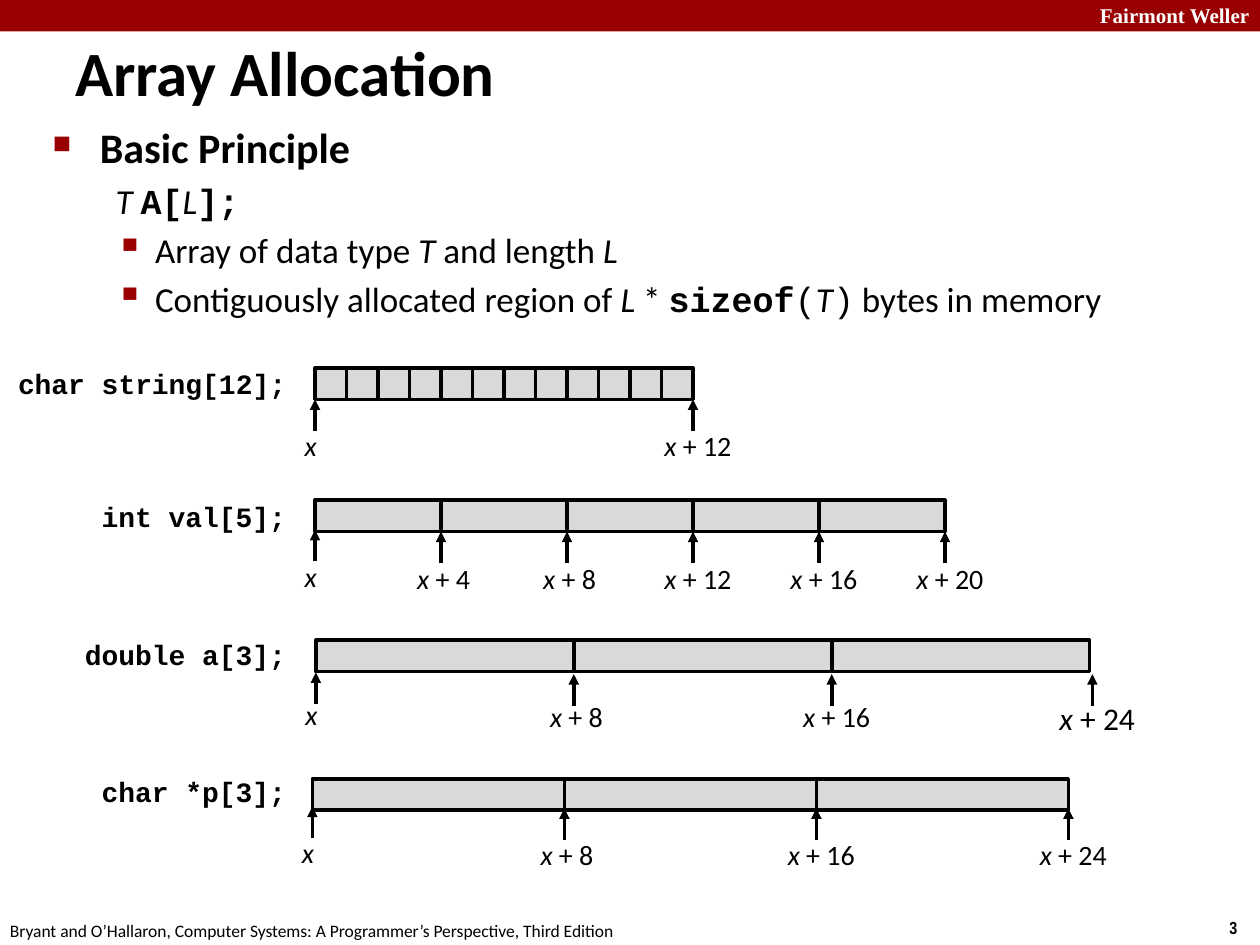
import dataclasses

import lxml.etree
import pptx
import pptx.dml.color
import pptx.enum.shapes
import pptx.enum.text
import pptx.oxml.ns
import pptx.util

Pt = pptx.util.Pt
RGBColor = pptx.dml.color.RGBColor
ALIGN = pptx.enum.text.PP_ALIGN
ANCHOR = pptx.enum.text.MSO_ANCHOR
RECTANGLE = pptx.enum.shapes.MSO_SHAPE.RECTANGLE
STRAIGHT = pptx.enum.shapes.MSO_CONNECTOR.STRAIGHT
qn = pptx.oxml.ns.qn

RED = RGBColor(0x99, 0x00, 0x00)
BLACK = RGBColor(0x00, 0x00, 0x00)
WHITE = RGBColor(0xFF, 0xFF, 0xFF)
GRAY = RGBColor(0xD9, 0xD9, 0xD9)

SANS = "Calibri"
MONO = "Courier New"
CELL_HEIGHT = 18
ARROW_LENGTH = 18


@dataclasses.dataclass
class ArrayRow:
    code: str
    code_top: float
    left: float
    top: float
    cell_width: float
    count: int
    element_bytes: int
    tip_top: float
    label_top: float
    marks: range
    first_lift: float = 1
    last_shift: float = 0
    last_size: float = 16


ROWS = [
    ArrayRow("char string[12];", 206, 180, 210.2, 18, 12, 1, 228.2, 241.2,
             range(0, 13, 12), first_lift=0),
    ArrayRow("int val[5];", 282, 180, 285.8, 72, 5, 4, 303.8, 317.3, range(6)),
    ArrayRow("double a[3];", 360.7, 180.5, 365.8, 147.4, 3, 8, 385.2, 396,
             range(4), last_shift=1.5, last_size=18),
    ArrayRow("char *p[3];", 439.2, 178.5, 445, 144, 3, 8, 461.9, 475.2, range(4)),
]


def add_span(para, text, size, font=SANS, bold=False, italic=False, color=BLACK):
    span = para.add_run()
    span.text = text
    span.font.size = Pt(size)
    span.font.name = font
    span.font.bold = bold
    span.font.italic = italic
    span.font.color.rgb = color


def add_box(shapes, left, top, width, height, align=ALIGN.LEFT, wrap=True):
    """Add an empty text box and return its text frame."""
    frame = shapes.add_textbox(Pt(left), Pt(top), Pt(width), Pt(height)).text_frame
    frame.word_wrap = wrap
    frame.paragraphs[0].alignment = align
    return frame


def add_rectangle(shapes, left, top, width, height, fill, line=None):
    shape = shapes.add_shape(RECTANGLE, Pt(left), Pt(top), Pt(width), Pt(height))
    shape.shadow.inherit = False
    shape.fill.solid()
    shape.fill.fore_color.rgb = fill
    if line is None:
        shape.line.fill.background()
    else:
        shape.line.color.rgb = line
        shape.line.width = Pt(2)


def add_up_arrow(shapes, x, tip):
    arrow = shapes.add_connector(STRAIGHT, Pt(x), Pt(tip + ARROW_LENGTH), Pt(x), Pt(tip))
    arrow.line.color.rgb = BLACK
    arrow.line.width = Pt(2)
    line = arrow.line._get_or_add_ln()
    lxml.etree.SubElement(line, qn("a:tailEnd"), type="triangle")
    lxml.etree.SubElement(arrow._element.spPr, qn("a:effectLst"))


def set_indent(para, margin, hanging, bullet=None, percent=100):
    properties = para._p.get_or_add_pPr()
    properties.set("marL", str(Pt(margin)))
    properties.set("indent", str(Pt(-hanging)))
    if bullet:
        color = lxml.etree.SubElement(properties, qn("a:buClr"))
        lxml.etree.SubElement(color, qn("a:srgbClr"), val=str(RED))
        lxml.etree.SubElement(properties, qn("a:buSzPct"), val=str(percent * 1000))
        lxml.etree.SubElement(properties, qn("a:buChar"), char=bullet)


def add_frame_parts(page):
    """Add the top band, the source line and the page number."""
    add_rectangle(page.shapes, 0, 0, 720, 18, RED)
    band = add_box(page.shapes, 590, -2, 130, 21.6, ALIGN.RIGHT)
    band.margin_right = Pt(6)
    add_span(band.paragraphs[0], "Fairmont Weller", 12, "Times New Roman", bold=True, color=WHITE)
    number = add_box(page.shapes, 695.5, 520.6, 24.5, 19.4, wrap=False)
    add_span(number.paragraphs[0], "3", 10, "Arial Narrow", bold=True)
    source = add_box(page.shapes, -1.4, 522, 366, 18, wrap=False)
    add_span(source.paragraphs[0], "Bryant and O’Hallaron, Computer Systems: "
             "A Programmer’s Perspective, Third Edition", 10)


def add_title(page, left, top, width, height):
    frame = add_box(page.shapes, left, top, width, height)
    frame.vertical_anchor = ANCHOR.MIDDLE
    add_span(frame.paragraphs[0], "Array Allocation", 36, bold=True)


def add_principle(page, left, top, width, height):
    frame = add_box(page.shapes, left, top, width, height)
    heading = frame.paragraphs[0]
    heading.space_before = Pt(5)
    set_indent(heading, 27, 27, "■", 60)
    add_span(heading, "Basic Principle", 24, bold=True)

    italic = {"italic": True}
    mono = {"font": MONO}
    code = {"font": MONO, "bold": True}
    lines = [
        (None, [("T ", italic), ("A[", code), ("L", italic), ("];", code)]),
        ("▪", [("Array of data type ", {}), ("T", italic),
               (" and length ", {}), ("L", italic)]),
        ("▪", [("Contiguously allocated region of ", {}), ("L", italic), (" * ", {}),
               ("sizeof", code), ("(", mono), ("T", italic), (")", mono),
               (" bytes in memory", {})]),
    ]
    for bullet, spans in lines:
        para = frame.add_paragraph()
        para.level = 1
        para.space_before = Pt(4)
        set_indent(para, 58.5, 22.5, bullet, 110)
        for text, style in spans:
            add_span(para, text, 20, **style)


def add_address(shapes, x, top, offset, size):
    """Centre the address label just beside the arrow at x."""
    width = 78 if offset else 31
    nudge = 0 if offset == 0 else 1.5 if offset < 10 else 2.8
    center = x + (nudge if offset else -2.5)
    para = add_box(shapes, center - width / 2, top, width, 26.6, ALIGN.CENTER).paragraphs[0]
    add_span(para, "x " if offset else "x", size, italic=True)
    if offset:
        add_span(para, f"+ {offset}", size)


def add_array_row(page, row):
    """Add a declaration, its memory cells and the marked addresses."""
    code_width = len(row.code) * 9.6 + 14.4
    code = add_box(page.shapes, 170.6 - code_width, row.code_top, code_width, 26.6,
                   ALIGN.RIGHT, wrap=False)
    add_span(code.paragraphs[0], row.code, 16, MONO, bold=True)

    shapes = page.shapes.add_group_shape().shapes
    for index in range(row.count):
        add_rectangle(shapes, row.left + index * row.cell_width, row.top,
                      row.cell_width, CELL_HEIGHT, GRAY, BLACK)
    for mark in row.marks:
        is_last = mark == row.count
        x = row.left + mark * row.cell_width + (row.last_shift if is_last else 0)
        lift = row.first_lift if mark == 0 else 0
        add_up_arrow(shapes, x, row.tip_top - lift)
        add_address(shapes, x, row.label_top - lift, mark * row.element_bytes,
                    row.last_size if is_last else 16)


def main():
    deck = pptx.Presentation()
    deck.slide_width, deck.slide_height = Pt(720), Pt(540)
    page = deck.slides.add_slide(deck.slide_layouts[6])
    add_frame_parts(page)
    add_title(page, 36, 18, 468, 45.4)
    add_principle(page, 23, 66.2, 654.5, 127.4)
    for row in ROWS:
        add_array_row(page, row)
    deck.save("out.pptx")


if __name__ == "__main__":
    main()
